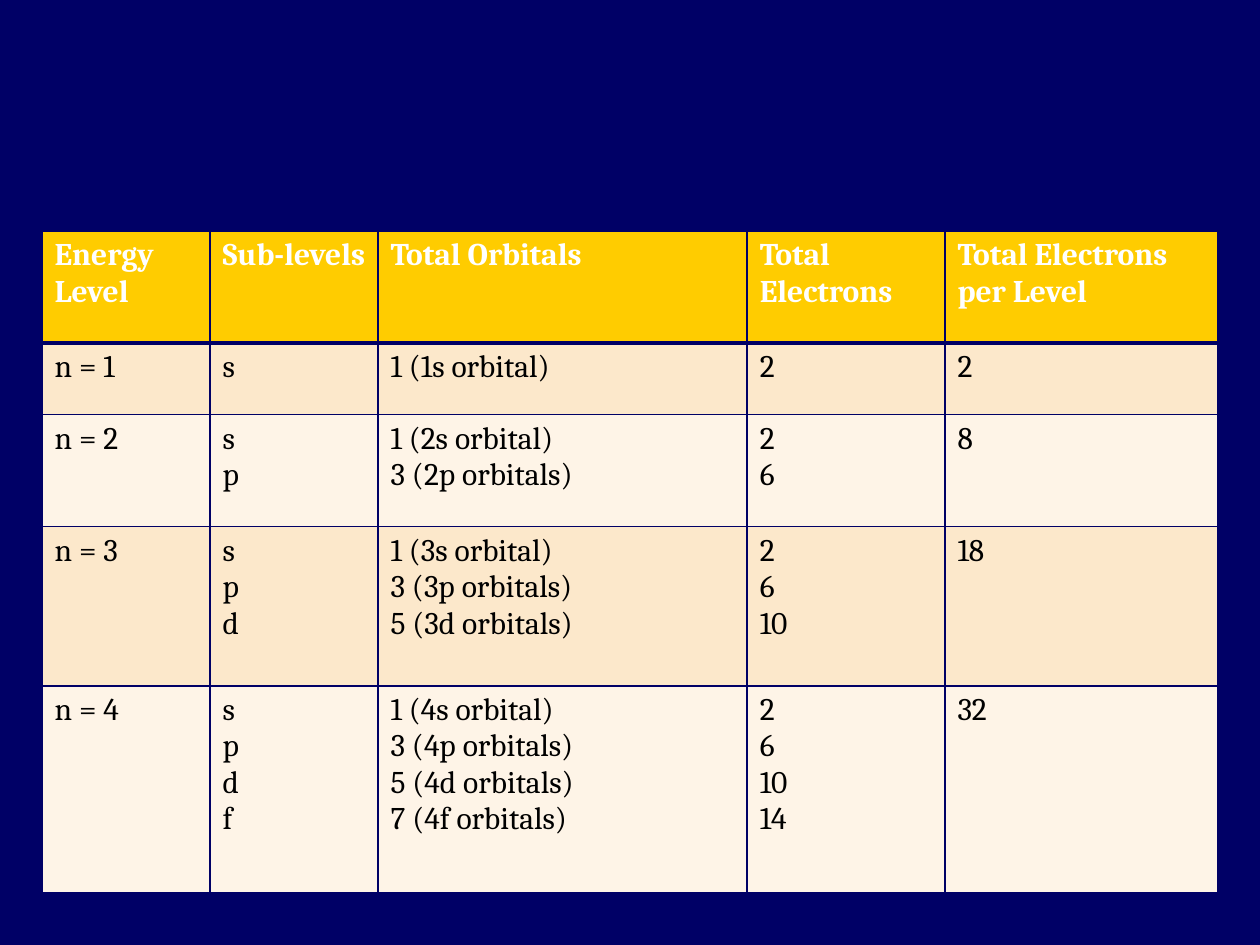
"""Build a slide with a table of electron energy levels."""
from dataclasses import dataclass

from lxml.etree import SubElement
from pptx import Presentation
from pptx.dml.color import RGBColor as Rgb
from pptx.oxml.ns import qn
from pptx.util import Pt


@dataclass(frozen=True)
class Theme:
    navy: str = "000066"
    gold: str = "FFCC00"
    bands: tuple = ("FCE8CB", "FEF4E7")
    white: str = "FFFFFF"
    black: str = "000000"
    font: str = "Cambria"
    size: float = 18
    thin: float = 1
    thick: float = 3


THEME = Theme()
HEADINGS = ["Energy Level", "Sub-levels", "Total Orbitals", "Total Electrons",
            "Total Electrons per Level"]
SUBLEVELS = "spdf"
COLUMN_WIDTHS = [96, 96, 211, 113, 156]
ROW_HEIGHTS = [64, 41, 64, 91, 118]


def level_entries(level):
    """Return the five cell texts for one energy level."""
    sublevels = SUBLEVELS[:level]
    counts = [2 * index + 1 for index in range(level)]
    orbitals = [f"{count} ({level}{letter} orbital{'s' if count > 1 else ''})"
                for count, letter in zip(counts, sublevels)]
    electrons = [str(2 * count) for count in counts]
    return [f"n = {level}", "\n".join(sublevels), "\n".join(orbitals),
            "\n".join(electrons), str(2 * sum(counts))]


def set_borders(cell, top, bottom):
    """Draw the four borders of a cell with the given widths."""
    properties = cell._tc.get_or_add_tcPr()
    widths = {"L": THEME.thin, "R": THEME.thin, "T": top, "B": bottom}
    for side, width in widths.items():
        border = SubElement(properties, qn(f"a:ln{side}"), w=str(Pt(width)))
        fill = SubElement(border, qn("a:solidFill"))
        SubElement(fill, qn("a:srgbClr"), val=THEME.navy)


def fill_cell(cell, text, background, color, bold):
    """Write text into a cell and colour its background."""
    cell.fill.solid()
    cell.fill.fore_color.rgb = Rgb.from_string(background)
    cell.text = text
    for paragraph in cell.text_frame.paragraphs:
        font = paragraph.font
        font.name, font.size, font.bold = THEME.font, Pt(THEME.size), bold
        font.color.rgb = Rgb.from_string(color)


def add_level_table(slide):
    """Add the table of levels, orbitals and electrons."""
    rows = [HEADINGS] + [level_entries(n) for n in range(1, len(SUBLEVELS) + 1)]
    table = slide.shapes.add_table(
        len(rows), len(HEADINGS), Pt(24), Pt(132),
        Pt(sum(COLUMN_WIDTHS)), Pt(sum(ROW_HEIGHTS))).table
    for column, width in zip(table.columns, COLUMN_WIDTHS):
        column.width = Pt(width)
    for index, (row, height, texts) in enumerate(
            zip(table.rows, ROW_HEIGHTS, rows)):
        row.height = Pt(height)
        header = index == 0
        background = THEME.gold if header else THEME.bands[(index - 1) % 2]
        color = THEME.white if header else THEME.black
        top = THEME.thick if index == 1 else THEME.thin
        bottom = THEME.thick if header else THEME.thin
        for cell, text in zip(row.cells, texts):
            set_borders(cell, top, bottom)
            fill_cell(cell, text, background, color, header)


def main():
    """Create the presentation and save it."""
    deck = Presentation()
    deck.slide_width, deck.slide_height = Pt(720), Pt(540)
    slide = deck.slides.add_slide(deck.slide_layouts.get_by_name("Blank"))
    slide.background.fill.solid()
    slide.background.fill.fore_color.rgb = Rgb.from_string(THEME.navy)
    add_level_table(slide)
    deck.save("out.pptx")


if __name__ == "__main__":
    main()
